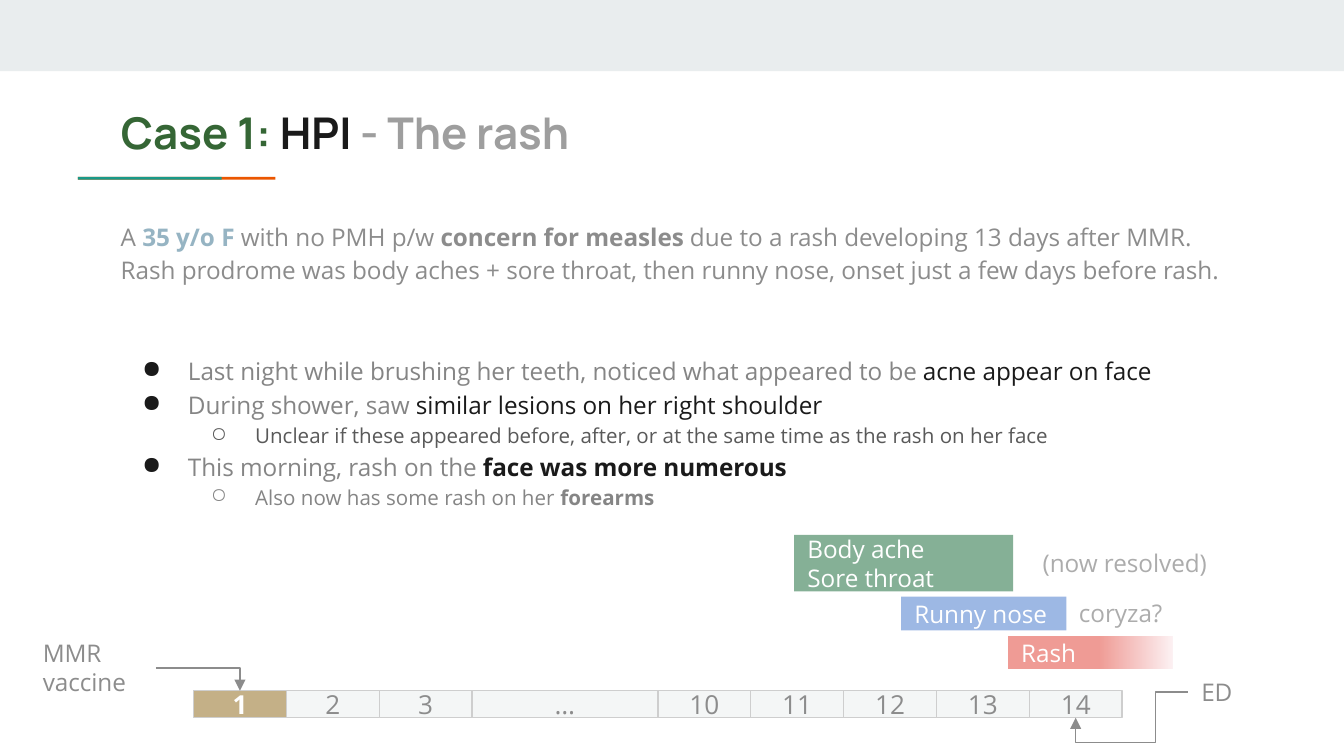
from typing import NamedTuple

from lxml.etree import SubElement
from pptx import Presentation
from pptx.dml.color import RGBColor
from pptx.enum.shapes import MSO_CONNECTOR as Connector, MSO_SHAPE as Shape
from pptx.enum.text import MSO_ANCHOR as Anchor, MSO_AUTO_SIZE as AutoSize, PP_ALIGN as Align
from pptx.oxml.ns import qn
from pptx.util import Inches, Pt

COLORS = {
    "band": "E9EDEE", "ink": "1A1A1A", "muted": "858585", "slate": "595959",
    "silver": "9E9E9E", "white": "FFFFFF", "forest": "356635", "steel": "2D6987",
    "teal": "1A9988", "orange": "EB5600", "vaccine": "896110",
    "aches": "0C622E", "nose": "3B71CA", "rash": "DF382C", "fading": "FAE4E8",
}
CELL = 0.1  # inches; the slide is a grid of 100 columns by 56.25 rows
BODY, DETAIL = 13, 11


class Box(NamedTuple):
    """Area of the slide, in grid columns and rows."""
    x: float
    y: float
    w: float
    h: float

    def inner(self, dx, dy, w, h):
        return Box(self.x + dx, self.y + dy, w, h)

    def lengths(self):
        return [Inches(side * CELL) for side in self]


SLIDE = Box(0, 0, 100, 56.25)


def rgb(name):
    return RGBColor.from_string(COLORS[name])


def write(paragraph, runs, size=BODY, font="Open Sans"):
    """Fill a paragraph with (text, colour, bold) runs."""
    for text, color, bold in runs:
        run = paragraph.add_run()
        run.text = text
        run.font.size, run.font.name, run.font.bold = Pt(size), font, bold
        run.font.color.rgb = rgb(color)


def set_frame(frame, anchor=Anchor.TOP):
    frame.word_wrap = True
    frame.auto_size = AutoSize.NONE
    frame.vertical_anchor = anchor
    frame.margin_left = frame.margin_right = Inches(0.1)
    frame.margin_top = frame.margin_bottom = Inches(0.1)
    return frame


def add_label(slide, box, text, color="ink", anchor=Anchor.TOP):
    frame = set_frame(slide.shapes.add_textbox(*box.lengths()).text_frame, anchor)
    write(frame.paragraphs[0], [(text, color, False)])


def add_block(slide, box, fill, lines=(), outline=None, size=BODY, bold=False, align=Align.LEFT):
    block = slide.shapes.add_shape(Shape.RECTANGLE, *box.lengths())
    block.shadow.inherit = False
    block.fill.solid()
    block.fill.fore_color.rgb = rgb(fill)
    if outline:
        block.line.color.rgb = rgb(outline)
        block.line.width = Pt(0.75)
    else:
        block.line.fill.background()
    frame = set_frame(block.text_frame, Anchor.MIDDLE)
    text_color = "ink" if fill == "band" else "white"
    for index, line in enumerate(lines):
        paragraph = frame.add_paragraph() if index else frame.paragraphs[0]
        paragraph.alignment = align
        write(paragraph, [(line, text_color, bold)], size)
    return block


def add_veil(slide, box):
    """Half-transparent white cover that dims what lies below it."""
    veil = add_block(slide, box, "white")
    color = veil._element.spPr.find(qn("a:solidFill"))[0]
    SubElement(color, qn("a:alpha"), val="50000")


def add_bent_arrow(slide, start, end, preset, adjustments=()):
    ends = [Inches(place * CELL) for place in (*start, *end)]
    arrow = slide.shapes.add_connector(Connector.ELBOW, *ends)
    arrow.line.color.rgb = rgb("ink")
    arrow.line.width = Pt(0.75)
    properties = arrow._element.spPr
    geometry = properties.find(qn("a:prstGeom"))
    geometry.set("prst", preset)
    guides = geometry.find(qn("a:avLst"))
    for number, value in enumerate(adjustments, 1):
        SubElement(guides, qn("a:gd"), name=f"adj{number}", fmla=f"val {value}")
    SubElement(properties.find(qn("a:ln")), qn("a:tailEnd"), type="triangle")
    SubElement(properties, qn("a:effectLst"))


def add_heading(slide, box):
    title = slide.shapes.title
    title.left, title.top, title.width, title.height = box.lengths()
    paragraph = set_frame(title.text_frame).paragraphs[0]
    paragraph.alignment = Align.LEFT
    write(paragraph, [("Case 1:", "forest", True), (" HPI ", "ink", True),
                      ("- The rash", "silver", True)], 23.4, "Manrope")
    underline = box.inner(-2.2, 6.27, 14.7, 0.2)
    add_block(slide, underline, "orange")
    add_block(slide, underline._replace(w=10.7), "teal")


def add_summary(slide, box):
    frame = set_frame(slide.shapes.add_textbox(*box.lengths()).text_frame)
    paragraph = frame.paragraphs[0]
    paragraph.line_spacing = 1.15
    write(paragraph, [
        ("A ", "ink", False), ("35 y/o F", "steel", True),
        (" with no PMH p/w ", "ink", False), ("concern for measles", "ink", True),
        (" due to a rash developing 13 days after MMR. Rash prodrome was body aches + sore "
         "throat, then runny nose, onset just a few days before rash.", "ink", False)])
    add_veil(slide, box.inner(-5.4, -0.3, 93.3, 9.7))


def add_timeline(slide, box):
    """Row of days, the longer gap two units wide, with its two callouts."""
    unit = box.w / 10
    left = 0
    for day in ("1", "2", "3", "…", "10", "11", "12", "13", "14"):
        width = unit * (2 if day == "…" else 1)
        first = day == "1"
        add_block(slide, box.inner(left, 0, width, box.h), "vaccine" if first else "band",
                  [day], "silver", 14, first, Align.CENTER)
        left += width

    add_label(slide, box.inner(-12.2, -4.9, 9.4, 6.4), "MMR vaccine")
    add_bent_arrow(slide, (box.x - 2.8, box.y - 1.7), (box.x + unit / 2, box.y),
                   "bentConnector2")
    visit = box.inner(box.w + 4.9, -2, 9.4, 4.2)
    add_label(slide, visit, "ED")
    add_bent_arrow(slide, (visit.x, visit.y + visit.h / 2),
                   (box.x + box.w - unit / 2, box.y + box.h),
                   "bentConnector4", (29200, 196600))


def add_symptoms(slide, box):
    """Symptom bars, each starting one step later than the one above."""
    step = box.w / 2
    add_block(slide, box.inner(0, 0, 16.3, 4.2), "aches", ["Body ache", "Sore throat"])
    add_block(slide, box.inner(step, 4.6, 12.3, 2.5), "nose", ["Runny nose"])
    rash = add_block(slide, box.inner(2 * step, 7.5, 12.3, 2.5), "rash", ["Rash"])
    rash.fill.gradient()
    rash.fill.gradient_angle = 0
    for stop, color, position in zip(rash.fill.gradient_stops, ("rash", "fading"), (0.55, 1)):
        stop.color.rgb = rgb(color)
        stop.position = position
    add_label(slide, box.inner(17.5, 0, 16.3, 4.2), "(now resolved)", "slate", Anchor.MIDDLE)
    add_label(slide, box.inner(20.2, 3.7, 16.3, 4.2), "coryza?", "slate", Anchor.MIDDLE)


def add_bullet(paragraph, level, color):
    properties = paragraph._p.get_or_add_pPr()
    properties.set("marL", str(Inches(0.5 * (level + 1))))
    properties.set("indent", str(-Inches(0.33 if level else 0.34)))
    bullet_color = SubElement(properties, qn("a:buClr"))
    SubElement(bullet_color, qn("a:srgbClr"), val=COLORS[color])
    SubElement(properties, qn("a:buChar"), char="○" if level else "●")


def add_history(slide, box):
    findings = [
        (0, "ink", [("Last night while brushing her teeth, noticed what appeared to be ",
                     "muted", False), ("acne appear on face", "ink", False)]),
        (0, "ink", [("During shower, saw ", "muted", False),
                    ("similar lesions on her right shoulder", "ink", False)]),
        (1, "slate", [("Unclear if these appeared before, after, or at the same time as "
                       "the rash on her face", "slate", False)]),
        (0, "ink", [("This morning, rash on the ", "muted", False),
                    ("face was more numerous", "ink", True)]),
        (1, "muted", [("Also now has some rash on her ", "muted", False),
                      ("forearms", "muted", True)]),
    ]
    frame = set_frame(slide.shapes.add_textbox(*box.lengths()).text_frame)
    for index, (level, bullet_color, runs) in enumerate(findings):
        paragraph = frame.add_paragraph() if index else frame.paragraphs[0]
        paragraph.level = level
        paragraph.line_spacing = 1.15
        add_bullet(paragraph, level, bullet_color)
        write(paragraph, runs, DETAIL if level else BODY)


def main():
    deck = Presentation()
    _, _, deck.slide_width, deck.slide_height = SLIDE.lengths()
    slide = deck.slides.add_slide(deck.slide_layouts[5])
    add_block(slide, SLIDE._replace(h=5.3), "band")
    add_heading(slide, Box(8, 6.9, 84.1, 5.9))
    add_summary(slide, Box(8, 15.2, 84.1, 10.4))
    add_timeline(slide, Box(14.4, 51.4, 69.1, 2))
    add_symptoms(slide, Box(59.1, 39.8, 15.9, 10))
    add_veil(slide, Box(0.5, 38.1, 95.8, 17.4))
    add_history(slide, Box(8, 25.2, 81.9, 15.1))
    deck.save("out.pptx")


if __name__ == "__main__":
    main()
